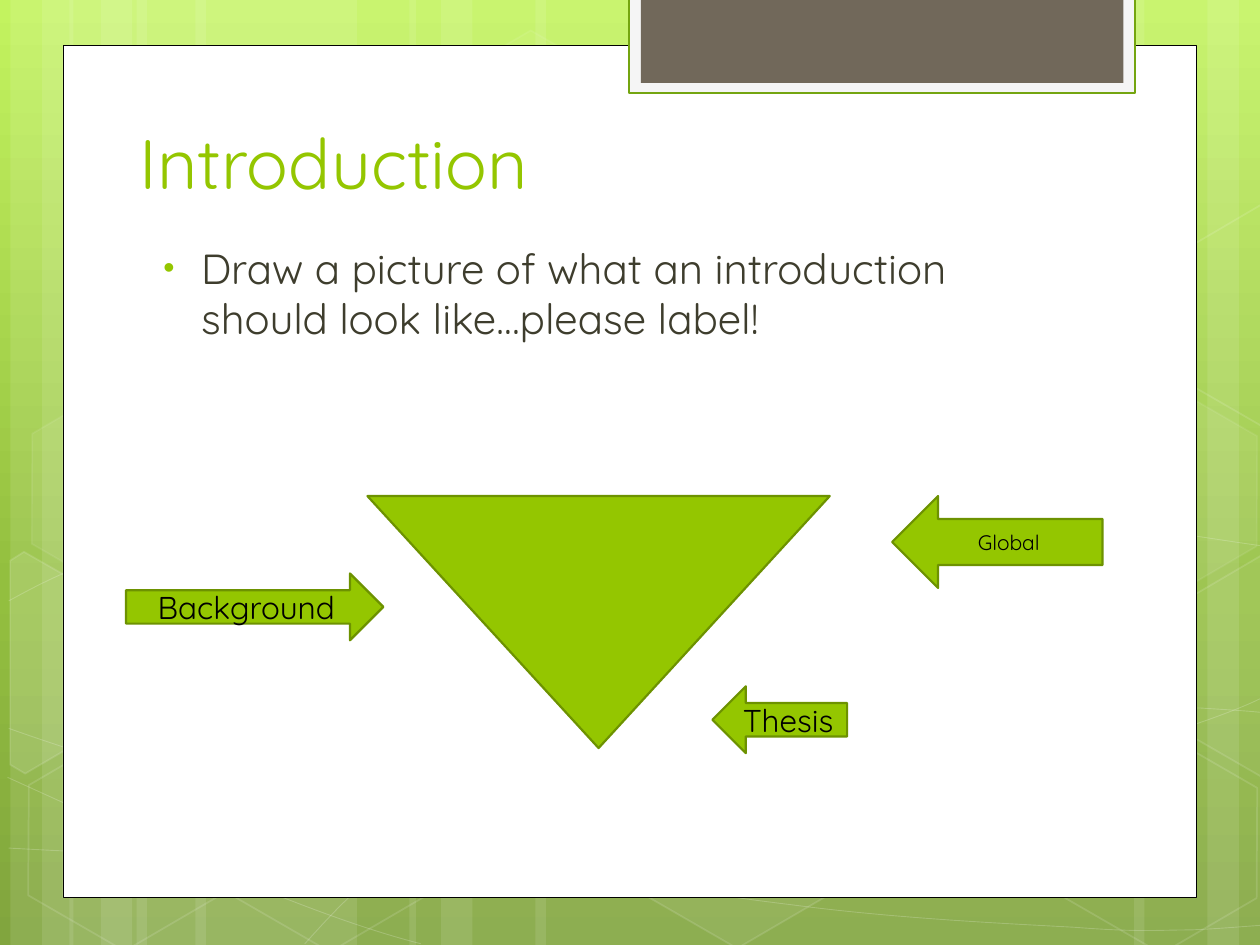
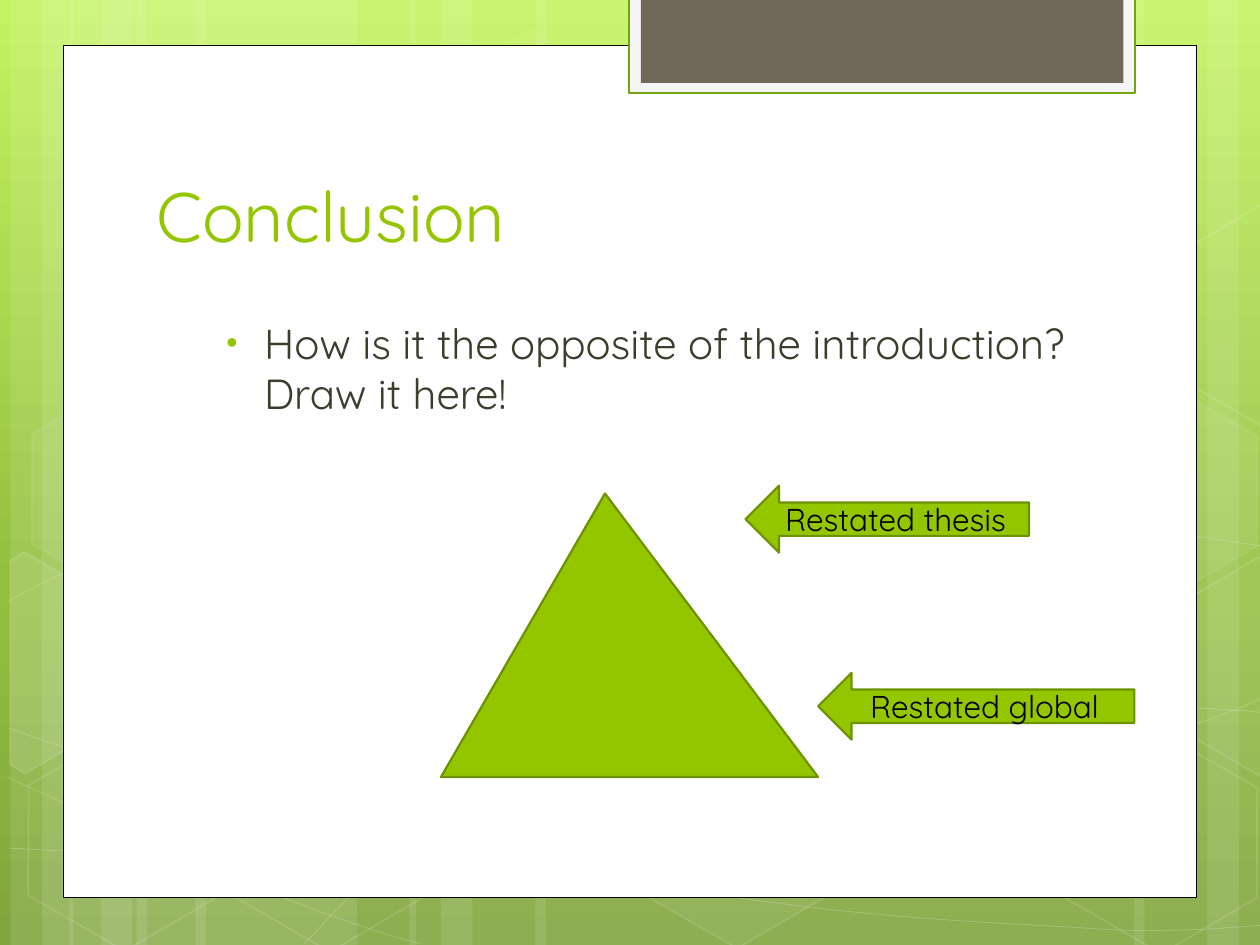
from copy import deepcopy
from itertools import chain
from math import cos, radians, sin

from lxml import etree
from pptx import Presentation
from pptx.dml.color import RGBColor
from pptx.enum import shapes, text
from pptx.oxml.ns import qn
from pptx.util import Pt

WHITE = RGBColor(0xFF, 0xFF, 0xFF)
BLACK = RGBColor(0x00, 0x00, 0x00)
GREEN = RGBColor(0x94, 0xC6, 0x00)
DARK_GREEN = RGBColor(0x6D, 0x92, 0x00)
TAB_GREEN = RGBColor(0x74, 0xA5, 0x10)
TAB_GRAY = RGBColor(0xF5, 0xF5, 0xF5)
TAUPE = RGBColor(0x71, 0x68, 0x5A)
INK = RGBColor(0x3E, 0x3D, 0x2D)
BACKDROP = [(0, RGBColor(0xC3, 0xF3, 0x5F)), (0.62, RGBColor(0x93, 0xBF, 0x3F)),
            (1, RGBColor(0x81, 0xA5, 0x3E))]
FONT = "Quicksand"
WIDTH, HEIGHT = 720, 540
TILT = 30
KIND = shapes.MSO_SHAPE

SLIDES = [
    {"title": ("Introduction", (72.7, 29.9, 553, 90)),
     "body": ("Draw a picture of what an introduction should look like…please label!",
              (80.4, 134.9, 533.5, 276.5)),
     "figure": (KIND.FLOWCHART_MERGE, (210, 283.5, 264.2, 144), None),
     "arrows": [("Thesis", KIND.LEFT_ARROW, (407.1, 392.2, 77, 38.2), 18),
                ("Background", KIND.RIGHT_ARROW, (72, 327.7, 147.1, 38.2), 18),
                ("Global", KIND.LEFT_ARROW, (509.8, 283.5, 120.2, 52.5), 12)]},
    {"title": ("Conclusion", (82.3, 80.9, 553, 69.1)),
     "body": ("How is it the opposite of the introduction? Draw it here!",
              (116.4, 177.8, 533.5, 276.5)),
     "figure": (KIND.ISOSCELES_TRIANGLE, (252, 282, 215.5, 162), 0.435),
     "arrows": [("Restated thesis", KIND.LEFT_ARROW, (426, 277.6, 162, 38.2), 18),
                ("Restated global", KIND.LEFT_ARROW, (467.5, 384.5, 180.7, 38.2), 18)]},
]

STRIPES = [(72, 126), (0, 36), (18, 60)]
STRIPE_SPAN = 198
STRIPE_STARTS = [(6, False), (39.6, False), (528, True)]
CENTER_STRIPES = [(306, 222), (234, 36), (252, 60)]

HEXAGON_SIZE = (126, 109.4)
HEXAGONS_BEHIND = [(240.5, 26, 4, 8), (358, 424, 6, 12)]
HEXAGONS_FRONT = [(8, 425.5, None, 12), (10, 224.6, 7, 8), (125.3, 426, None, 12),
                  (542, 326, 10, 12), (600.5, 427, None, 12), (600.5, 226, 7, 8)]

LEFT_EDGE = [(5.8, 320.4), (13.7, 315.4), (69.1, 347),
             (68.4, 410.4), (14.4, 442.1), (5.8, 437)]
RIGHT_EDGE = [(666.7, 349.2), (720.7, 317.5), (726.5, 321.1),
              (726.5, 441.4), (721.4, 444.2), (666.7, 412.6)]
UPPER_RIGHT_EDGE = [(x, y - 200.5) for x, y in RIGHT_EDGE]

WAVES = [
    [[(5, 484.6)], [(43.9, 486.7), (82.8, 488.9), (136.8, 488.2)],
     [(190.8, 487.4), (257.8, 486), (329.8, 478.8)],
     [(401.8, 471.6), (504, 457.9), (570.2, 444.2)],
     [(635.8, 430.6), (703.4, 409), (725, 396.7)]],
    [[(5, 343.4)], [(25.9, 331.9), (46.8, 321.1), (87.1, 310.3)],
     [(128.2, 299.5), (186.5, 283.7), (249.8, 278.6)],
     [(313.9, 273.6), (391.7, 272.9), (470.9, 278.6)],
     [(550.1, 284.4), (681.8, 306.7), (725, 312.5)]],
    [[(4.3, 444.2)], [(91.4, 483.8), (177.8, 523.4), (240.5, 539.3)]],
    [[(5, 416.2)], [(27.4, 424.1), (50.4, 432), (92.2, 443.5)],
     [(133.9, 454.3), (196.6, 472.3), (257, 484.6)],
     [(316.8, 496.8), (392.4, 509.8), (452.2, 517)],
     [(511.9, 524.9), (576, 527.8), (614.2, 529.9)],
     [(651.6, 532.8), (661.7, 531.4), (680.4, 531.4)],
     [(699.1, 530.6), (712.1, 529.2), (725, 528.5)]],
    [[(174.2, 539.3)], [(187.2, 524.9), (200.2, 510.5), (217.4, 497.5)],
     [(234.7, 484.6), (259.2, 470.2), (279.4, 460.1)],
     [(299.5, 450), (311.8, 445.7), (338.4, 438.5)],
     [(364.3, 431.3), (412.6, 421.2), (437.8, 416.2)],
     [(463.7, 411.1), (467.3, 411.1), (489.6, 409.7)],
     [(511.9, 407.5), (547.2, 405.4), (571.7, 404.6)],
     [(596.9, 403.9), (637.9, 404.6), (637.9, 404.6)], [(686.2, 404.6)],
     [(698.4, 405.4), (710.6, 406.1), (717.8, 406.8)],
     [(724.3, 407.5), (722.2, 406.8), (724.3, 407.5)]],
]


def paint(fill, color, opacity=100):
    if color is None:
        fill.background()
        return
    fill.solid()
    fill.fore_color.rgb = color
    if opacity < 100:
        for node in fill._xPr.iter(qn("a:srgbClr")):
            etree.SubElement(node, qn("a:alpha"), val=str(opacity * 1000))


def style(shape, fill, fill_opacity=100, line=None, weight=1, line_opacity=100):
    shape.shadow.inherit = False
    paint(shape.fill, fill, fill_opacity)
    paint(shape.line.fill, line, line_opacity)
    if line is not None:
        shape.line.width = Pt(weight)


def add_preset(slide, kind, place, *look):
    shape = slide.shapes.add_shape(kind, *map(Pt, place))
    style(shape, *look)
    return shape


def add_outline(slide, points, closed):
    start, *rest = [(Pt(x), Pt(y)) for x, y in points]
    builder = slide.shapes.build_freeform(*start, scale=1.0)
    builder.add_line_segments(rest, close=closed)
    return builder.convert_to_shape()


def add_wave(slide, segments):
    wave = add_outline(slide, chain.from_iterable(segments), False)
    lines = iter(wave._element.findall(".//" + qn("a:lnTo")))
    for segment in segments[1:]:
        first, *others = [next(lines) for _ in segment]
        if others:
            first.tag = qn("a:cubicBezTo")
            for other in others:
                first.append(other[0])
                other.getparent().remove(other)
    style(wave, None, 100, WHITE, 0.5, 20)


def add_cut_hexagon(slide, points, opacity):
    c, s = cos(radians(TILT)), sin(radians(TILT))
    upright = [(x * c + y * s, y * c - x * s) for x, y in points]
    mid_x, mid_y = [(min(axis) + max(axis)) / 2 for axis in zip(*upright)]
    dx = mid_x * c - mid_y * s - mid_x
    dy = mid_x * s + mid_y * c - mid_y
    moved = [(x + dx, y + dy) for x, y in upright]
    shape = add_outline(slide, moved + moved[:1], True)
    shape.rotation = TILT
    style(shape, WHITE if opacity else None, opacity or 100, WHITE, 1, 12)


def add_hexagon(slide, left, top, opacity, line_opacity):
    hexagon = add_preset(slide, KIND.HEXAGON, (left, top, *HEXAGON_SIZE),
                         WHITE if opacity else None, opacity or 100, WHITE, 1, line_opacity)
    hexagon.adjustments[0] = 0.285
    hexagon.rotation = TILT


def write(frame, words, size, color):
    frame.word_wrap = True
    para = frame.paragraphs[0]
    span = para.add_run()
    span.text = words
    span.font.name = FONT
    span.font.size = Pt(size)
    span.font.color.rgb = color
    return para


def add_bullet(para):
    props = para._p.get_or_add_pPr()
    props.set("marL", str(Pt(27.4)))
    props.set("indent", str(-Pt(21.6)))
    color = etree.SubElement(props, qn("a:buClr"))
    etree.SubElement(color, qn("a:srgbClr"), val=str(GREEN))
    etree.SubElement(props, qn("a:buSzPct"), val="76000")
    etree.SubElement(props, qn("a:buFont"), typeface="Arial")
    etree.SubElement(props, qn("a:buChar"), char="•")


def add_backdrop(slide):
    fill = slide.background.fill
    fill.gradient()
    fill.gradient_angle = 270
    last = fill._xPr.findall(".//" + qn("a:gs"))[-1]
    last.addnext(deepcopy(last))
    for stop, (position, color) in zip(fill.gradient_stops, BACKDROP):
        stop.position = position
        stop.color.rgb = color


def add_decoration(slide):
    add_backdrop(slide)
    stripes = [(start + (STRIPE_SPAN - left - width if mirrored else left), width)
               for start, mirrored in STRIPE_STARTS for left, width in STRIPES]
    for left, width in stripes + CENTER_STRIPES:
        add_preset(slide, KIND.RECTANGLE, (left, 0, width, HEIGHT), WHITE, 10)
    for segments in WAVES:
        add_wave(slide, segments)
    for hexagon in HEXAGONS_BEHIND:
        add_hexagon(slide, *hexagon)
    add_cut_hexagon(slide, LEFT_EDGE, 10)
    for hexagon in HEXAGONS_FRONT:
        add_hexagon(slide, *hexagon)
    add_cut_hexagon(slide, RIGHT_EDGE, 4)
    add_cut_hexagon(slide, UPPER_RIGHT_EDGE, None)
    add_preset(slide, KIND.RECTANGLE, (36, 25.9, 648, 487.2), WHITE, 100, BLACK, 0.5)
    add_preset(slide, KIND.RECTANGLE, (359.2, -1.4, 289.5, 54.7), TAB_GRAY, 100, TAB_GREEN, 1.25)
    add_preset(slide, KIND.RECTANGLE, (366.2, -1.4, 275.8, 48.8), TAUPE)


def add_content(slide, content):
    words, place = content["title"]
    title = slide.shapes.add_textbox(*map(Pt, place)).text_frame
    title.vertical_anchor = text.MSO_ANCHOR.BOTTOM
    write(title, words, 40, GREEN)

    words, place = content["body"]
    body = slide.shapes.add_textbox(*map(Pt, place)).text_frame
    add_bullet(write(body, words, 24, INK))

    kind, place, peak = content["figure"]
    figure = add_preset(slide, kind, place, GREEN, 100, DARK_GREEN, 1.25)
    if peak is not None:
        figure.adjustments[0] = peak

    for words, kind, place, size in content["arrows"]:
        arrow = add_preset(slide, kind, place, GREEN, 100, DARK_GREEN, 1.25)
        arrow.text_frame.vertical_anchor = text.MSO_ANCHOR.MIDDLE
        para = write(arrow.text_frame, words, size, BLACK)
        para.alignment = text.PP_ALIGN.CENTER


def main():
    deck = Presentation()
    deck.slide_width, deck.slide_height = Pt(WIDTH), Pt(HEIGHT)
    for content in SLIDES:
        page = deck.slides.add_slide(deck.slide_layouts[6])
        add_decoration(page)
        add_content(page, content)
    deck.save("out.pptx")


if __name__ == "__main__":
    main()
